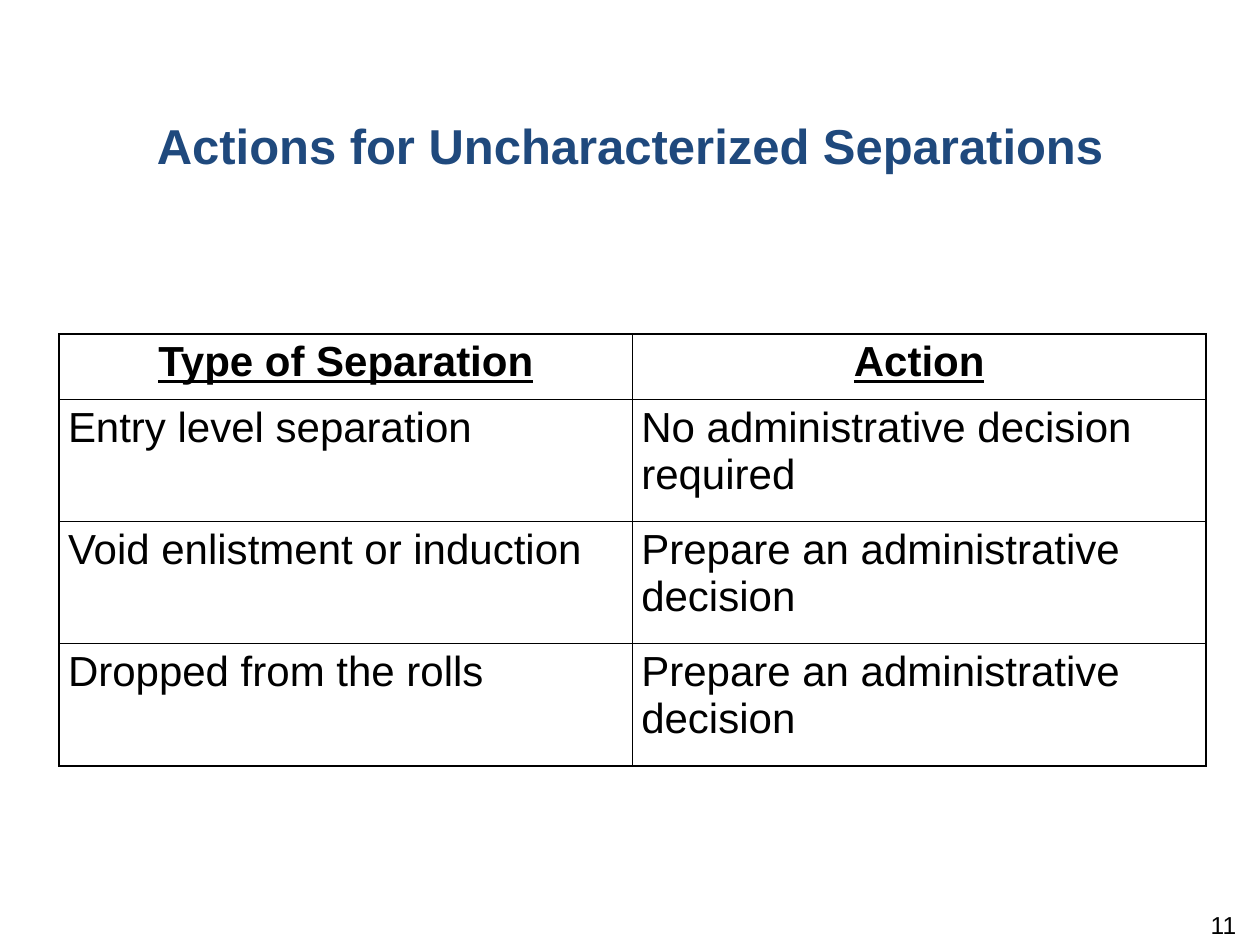
import dataclasses
import pptx
import pptx.dml.color
import pptx.enum.text
import pptx.oxml
import pptx.oxml.ns
import pptx.util

WIDE, HIGH = pptx.util.Inches(10), pptx.util.Inches(7.5)
FONT = "Arial"
BLACK = pptx.dml.color.RGBColor(0x00, 0x00, 0x00)
WHITE = pptx.dml.color.RGBColor(0xFF, 0xFF, 0xFF)
NAVY = pptx.dml.color.RGBColor(0x1F, 0x49, 0x7D)
ALIGN = pptx.enum.text.PP_ALIGN


@dataclasses.dataclass(frozen=True)
class Area:
    """A place on the slide, in percent of its width and height."""
    left: float
    top: float
    width: float
    height: float

    def emu(self) -> tuple[int, ...]:
        sides = (self.left, self.top, self.width, self.height)
        return tuple(round(part * full / 100)
                     for part, full in zip(sides, (WIDE, HIGH) * 2))


@dataclasses.dataclass(frozen=True)
class Entry:
    kind: str
    action: str


TITLE = Area(0, 11.6, 100, 15.87)
NUMBER = Area(75.8, 96.27, 23.3, 5.33)
GRID = Area(4.7, 35.33, 91, 45.73)
HEAD_ROW = 0.52  # inches; the other rows share the rest

HEAD = Entry("Type of Separation", "Action")
ENTRIES = [
    Entry("Entry level separation", "No administrative decision required"),
    Entry("Void enlistment or induction", "Prepare an administrative decision"),
    Entry("Dropped from the rolls", "Prepare an administrative decision"),
]


def write(frame, text: str, *, size: float, color=BLACK, bold=False,
          under=False, align=ALIGN.LEFT, after: float = 0) -> None:
    frame.word_wrap = True
    para = frame.paragraphs[0]
    para.alignment = align
    para.space_after = pptx.util.Pt(after)
    run = para.add_run()
    run.text = text
    font = run.font
    font.name, font.size = FONT, pptx.util.Pt(size)
    font.bold, font.underline = bold, under
    font.color.rgb = color


def add_text(slide, area: Area, text: str, top: float = 0.05, **style) -> None:
    frame = slide.shapes.add_textbox(*area.emu()).text_frame
    frame.margin_top = pptx.util.Inches(top)
    write(frame, text, after=6, **style)


def rule_cell(cell) -> None:
    """Draw a thin black line on each side of a cell."""
    props = cell._tc.get_or_add_tcPr()
    for spot, side in enumerate(("lnL", "lnR", "lnT", "lnB")):
        props.insert(spot, pptx.oxml.parse_xml(
            f'<a:{side} {pptx.oxml.ns.nsdecls("a")} w="{pptx.util.Pt(1)}">'
            f'<a:solidFill><a:srgbClr val="{BLACK}"/></a:solidFill></a:{side}>'))


def fill_cell(cell, text: str, head: bool) -> None:
    cell.margin_left = cell.margin_right = pptx.util.Inches(0.07)
    cell.margin_top = cell.margin_bottom = pptx.util.Inches(0.04)
    cell.fill.solid()
    cell.fill.fore_color.rgb = WHITE
    rule_cell(cell)
    write(cell.text_frame, text, size=24, bold=head, under=head,
          align=ALIGN.CENTER if head else ALIGN.LEFT)


def add_grid(slide, area: Area, head: Entry, entries: list[Entry]) -> None:
    rows = [head, *entries]
    table = slide.shapes.add_table(len(rows), 2, *area.emu()).table
    table.first_row = table.horz_banding = False
    first = pptx.util.Inches(HEAD_ROW)
    rest = (area.emu()[3] - first) // len(entries)
    for index, entry in enumerate(rows):
        table.rows[index].height = rest if index else first
        for col, text in enumerate(dataclasses.astuple(entry)):
            fill_cell(table.cell(index, col), text, head=index == 0)


def main() -> None:
    deck = pptx.Presentation()
    deck.slide_width, deck.slide_height = WIDE, HIGH
    slide = deck.slides.add_slide(deck.slide_layouts[6])

    # Title
    add_text(slide, TITLE, "Actions for Uncharacterized Separations",
             size=28, color=NAVY, bold=True, align=ALIGN.CENTER)
    # Page number
    add_text(slide, NUMBER, "11", top=0, size=14, align=ALIGN.RIGHT)
    # Table of separations and actions
    add_grid(slide, GRID, HEAD, ENTRIES)

    deck.save("out.pptx")


if __name__ == "__main__":
    main()
